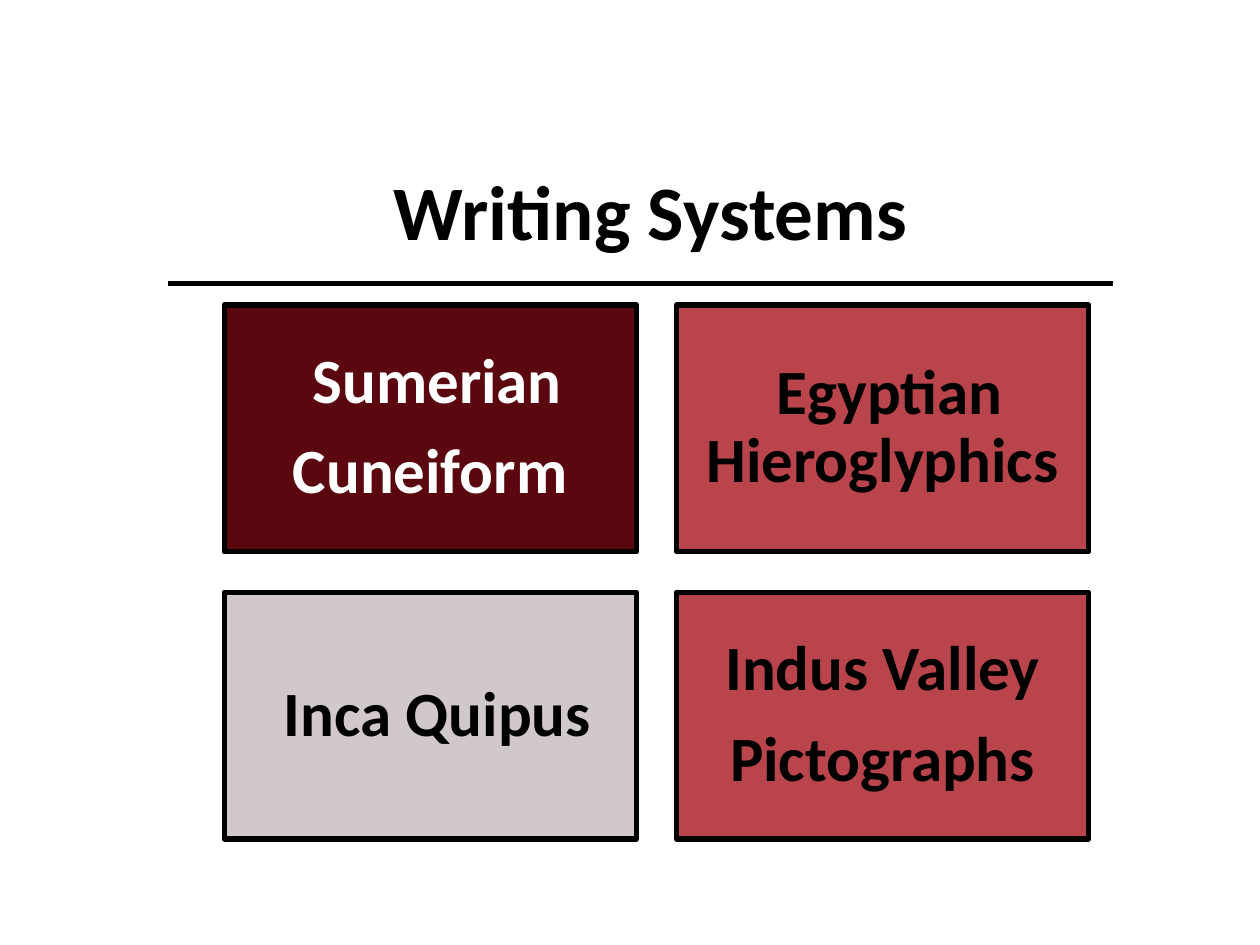
from lxml.etree import SubElement
from pptx import Presentation
from pptx.dml.color import RGBColor
from pptx.enum.shapes import MSO_CONNECTOR, MSO_SHAPE
from pptx.enum.text import MSO_ANCHOR, PP_ALIGN
from pptx.oxml.ns import qn
from pptx.util import Inches, Pt

TITLE = "Writing Systems"
BLACK, WHITE = "000000", "FFFFFF"
SYSTEMS = [
    ([" Sumerian", "Cuneiform"], "5A070F", WHITE),
    ([" Egyptian\nHieroglyphics"], "B9444B", BLACK),
    ([" Inca Quipus"], "D1C9C9", BLACK),
    ([" Indus Valley ", "Pictographs"], "B9444B", BLACK),
]
LEFT, TOP, WIDTH, HEIGHT = 1.78, 2.42, 3.27, 1.96
GAP = 0.32
COLUMNS = 2


def rgb(color):
    return RGBColor.from_string(color)


def add_text(p, text, size, color):
    p.alignment = PP_ALIGN.CENTER
    for i, line in enumerate(text.split("\n")):
        if i:
            p.add_line_break()
        r = p.add_run()
        r.text = line
        r.font.name = "Calibri"
        r.font.size = Pt(size)
        r.font.bold = True
        r.font.color.rgb = rgb(color)


def add_system(s, index, lines, fill, color):
    row, col = divmod(index, COLUMNS)
    sp = s.shapes.add_shape(
        MSO_SHAPE.RECTANGLE,
        Inches(LEFT + col * (WIDTH + GAP)), Inches(TOP + row * (HEIGHT + GAP)),
        Inches(WIDTH), Inches(HEIGHT))
    sp.shadow.inherit = False
    sp.fill.solid()
    sp.fill.fore_color.rgb = rgb(fill)
    sp.line.color.rgb = rgb(BLACK)
    sp.line.width = Pt(3)
    tf = sp.text_frame
    tf.word_wrap = True
    tf.vertical_anchor = MSO_ANCHOR.MIDDLE
    tf.margin_left = tf.margin_right = tf.margin_top = tf.margin_bottom = Inches(0.15)
    for i, line in enumerate(lines):
        p = tf.add_paragraph() if i else tf.paragraphs[0]
        p.line_spacing = 0.9
        p.space_after = Pt(12.6)
        add_text(p, line, 36, color)


prs = Presentation()
prs.slide_width, prs.slide_height = Inches(10), Inches(7.5)
s = prs.slides.add_slide(prs.slide_layouts[6])

for index, system in enumerate(SYSTEMS):
    add_system(s, index, *system)

rule = s.shapes.add_connector(
    MSO_CONNECTOR.STRAIGHT, Inches(1.33), Inches(2.25), Inches(8.83), Inches(2.25))
rule.line.color.rgb = rgb(BLACK)
rule.line.width = Pt(3)
SubElement(rule._element.spPr, qn("a:effectLst"))

title = s.shapes.add_textbox(Inches(1.58), Inches(1.25), Inches(7.17), Inches(0.84))
title.text_frame.word_wrap = True
add_text(title.text_frame.paragraphs[0], TITLE, 44, BLACK)

prs.save("out.pptx")
